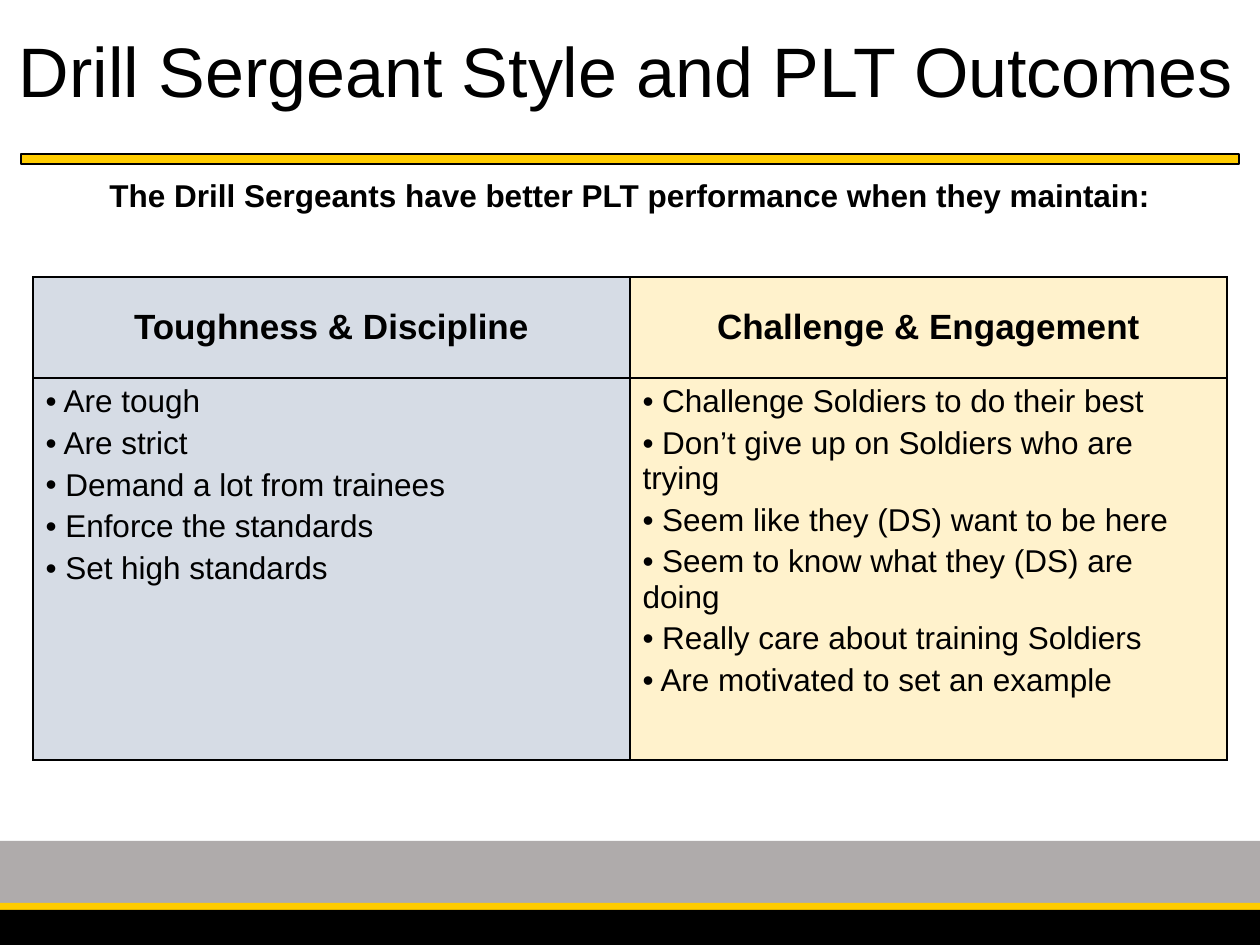
import dataclasses

import lxml.etree
import pptx
import pptx.dml.color
import pptx.enum.shapes
import pptx.enum.text
import pptx.oxml.ns
import pptx.util

PX = 914400 / 126  # EMU in one pixel
ALIGN = pptx.enum.text.PP_ALIGN
ANCHOR = pptx.enum.text.MSO_ANCHOR
qn = pptx.oxml.ns.qn


@dataclasses.dataclass(frozen=True)
class Theme:
    font: str = "Arial"
    black: str = "000000"
    gold: str = "FFCC00"
    gray: str = "AFABAB"
    blue_tint: str = "D6DCE5"
    gold_tint: str = "FFF2CC"
    title_size: int = 40
    heading_size: int = 20
    text_size: int = 18


theme = Theme()


def lengths(*pixels):
    return [pptx.util.Emu(round(value * PX)) for value in pixels]


def write_text(frame, *lines, size, bold=False, align=ALIGN.LEFT, bullet=None):
    """Fill a text frame with one paragraph per line, spaced by 20% of the type size."""
    frame.word_wrap = True
    for index, line in enumerate(lines):
        para = frame.paragraphs[0] if index == 0 else frame.add_paragraph()
        para.alignment = align
        if index:
            para.space_before = pptx.util.Pt(size * 0.2)
        if bullet:
            # The bullet has no hanging indent, so a space parts it from the text.
            line = " " + line
            properties = para._p.get_or_add_pPr()
            properties.set("marL", "0")
            properties.set("indent", "0")
            lxml.etree.SubElement(properties, qn("a:buFont"), typeface=theme.font)
            lxml.etree.SubElement(properties, qn("a:buChar"), char=bullet)
        span = para.add_run()
        span.text = line
        span.font.name = theme.font
        span.font.size = pptx.util.Pt(size)
        span.font.bold = bold
        span.font.color.rgb = pptx.dml.color.RGBColor.from_string(theme.black)


deck = pptx.Presentation()
deck.slide_width, deck.slide_height = lengths(1260, 945)
page = deck.slides.add_slide(deck.slide_layouts.get_by_name("Title Only"))

# Footer bands and the rule under the title
bands = [
    (0, 841, 1260, 63, theme.gray, None),
    (0, 903, 1260, 7, theme.gold, None),
    (0, 910, 1260, 35, theme.black, None),
    (21, 154, 1218, 10, theme.gold, theme.black),
]
for left, top, width, height, fill, outline in bands:
    band = page.shapes.add_shape(
        pptx.enum.shapes.MSO_SHAPE.RECTANGLE, *lengths(left, top, width, height)
    )
    band.shadow.inherit = False
    band.fill.solid()
    band.fill.fore_color.rgb = pptx.dml.color.RGBColor.from_string(fill)
    if outline:
        band.line.color.rgb = pptx.dml.color.RGBColor.from_string(outline)
        band.line.width = pptx.util.Pt(1)
    else:
        band.line.fill.background()

# Title and lead sentence
title = page.shapes.title
title.left, title.top, title.width, title.height = lengths(-4, 21, 1260, 97)
title.text_frame.auto_size = pptx.enum.text.MSO_AUTO_SIZE.NONE
title.text_frame.vertical_anchor = ANCHOR.TOP
write_text(
    title.text_frame,
    "Drill Sergeant Style and PLT Outcomes",
    size=theme.title_size,
    align=ALIGN.CENTER,
)

lead = page.shapes.add_textbox(*lengths(0, 170, 1260, 50))
write_text(
    lead.text_frame,
    "The Drill Sergeants have better PLT performance when they maintain:",
    size=theme.text_size,
    bold=True,
    align=ALIGN.CENTER,
)

# Table of the two styles
styles = [
    (
        "Toughness & Discipline",
        theme.blue_tint,
        [
            "Are tough",
            "Are strict",
            "Demand a lot from trainees",
            "Enforce the standards",
            "Set high standards",
        ],
    ),
    (
        "Challenge & Engagement",
        theme.gold_tint,
        [
            "Challenge Soldiers to do their best",
            "Don’t give up on Soldiers who are trying",
            "Seem like they (DS) want to be here",
            "Seem to know what they (DS) are doing",
            "Really care about training Soldiers",
            "Are motivated to set an example",
        ],
    ),
]
table = page.shapes.add_table(2, len(styles), *lengths(33, 277, 1194, 483)).table
table.first_row = False
table.horz_banding = False
table.rows[0].height, table.rows[1].height = lengths(101, 382)

for column, (heading, tint, traits) in enumerate(styles):
    heading_cell, traits_cell = table.cell(0, column), table.cell(1, column)
    heading_cell.vertical_anchor = ANCHOR.MIDDLE
    write_text(
        heading_cell.text_frame,
        heading,
        size=theme.heading_size,
        bold=True,
        align=ALIGN.CENTER,
    )
    write_text(traits_cell.text_frame, *traits, size=theme.text_size, bullet="•")
    for cell in (heading_cell, traits_cell):
        properties = cell._tc.get_or_add_tcPr()
        for side in ("a:lnL", "a:lnR", "a:lnT", "a:lnB"):
            border = lxml.etree.SubElement(
                properties, qn(side), w=str(pptx.util.Pt(1))
            )
            paint = lxml.etree.SubElement(border, qn("a:solidFill"))
            lxml.etree.SubElement(paint, qn("a:srgbClr"), val=theme.black)
        cell.fill.solid()
        cell.fill.fore_color.rgb = pptx.dml.color.RGBColor.from_string(tint)

deck.save("out.pptx")
